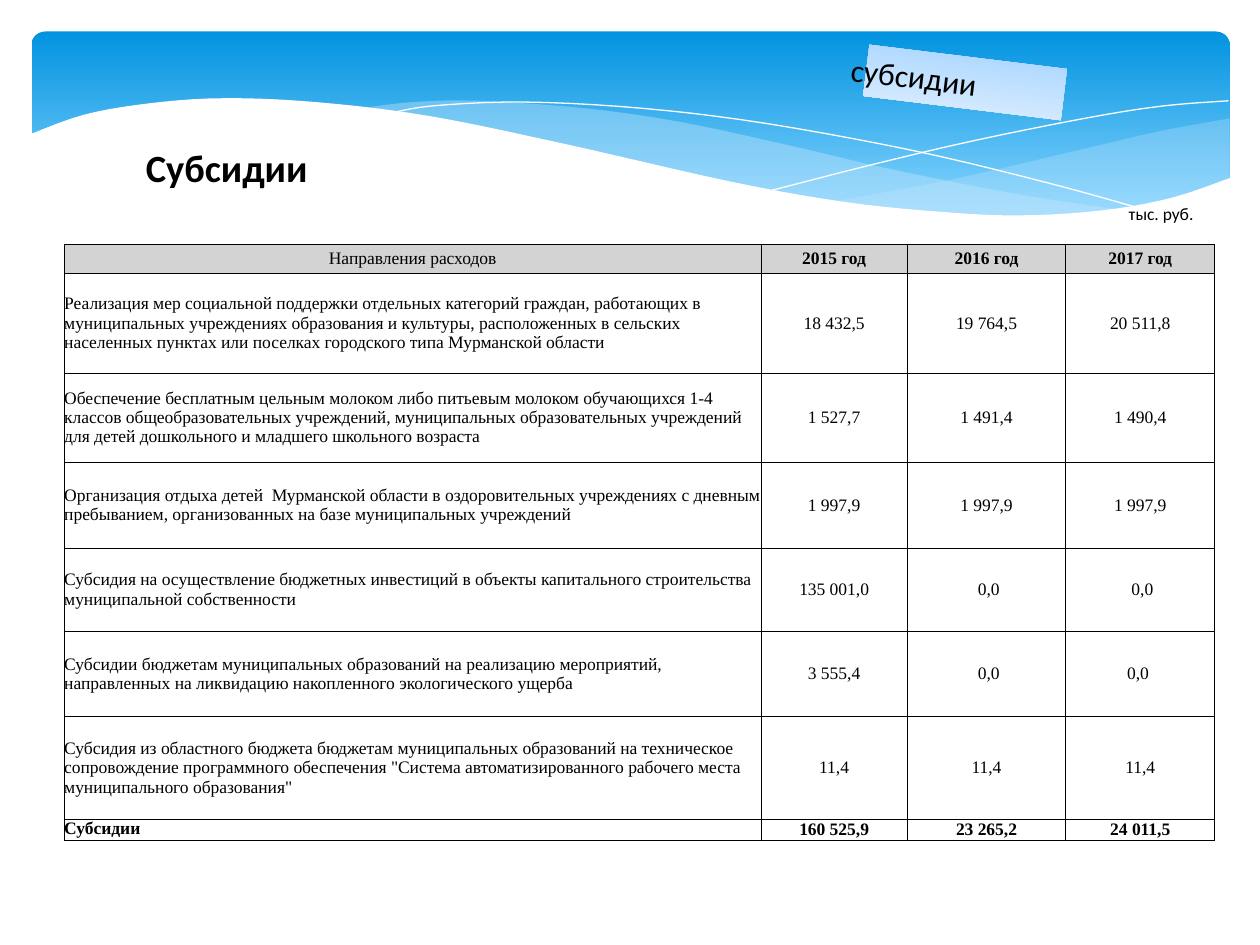
"""Build the slide on municipal subsidies for 2015-2017."""
from dataclasses import dataclass

from lxml import etree
from pptx import Presentation, util as u
from pptx.dml.color import RGBColor
from pptx.enum import shapes, text
from pptx.oxml.ns import qn


@dataclass(frozen=True)
class Theme:
    """Colours, fonts and type sizes of the slide."""
    ink: str = "000000"
    paper: str = "FFFFFF"
    header: str = "D3D3D3"
    wave: str = "C6E7FC"
    sky: tuple = ((0, "0293E0"), (0.9, "83D3FE"))
    ribbon: tuple = ((0, "A1D3FF"), (1, "E3F0FF"))
    heading_font: str = "Calibri"
    table_font: str = "Times New Roman"
    title: int = 22
    label: int = 18
    body: int = 10


THEME = Theme()
WIDTH, HEIGHT = u.Inches(10), u.Inches(7.5)
COLUMN, ROW = WIDTH / 10, HEIGHT / 7.5

BACK_WAVE = [
    [(9.76, 0.94), (9.21, 1.04), (8.61, 1.18), (7.53, 1.43), (6.61, 1.6)],
    [(6.61, 1.6), (7.19, 1.67), (7.81, 1.72), (8.35, 1.72), (8.89, 1.66), (9.35, 1.56), (9.76, 1.41)],
]
MIDDLE_WAVE = [
    [(8.93, 1.67), (8.07, 1.54), (7.06, 1.34), (6.29, 1.16), (5.41, 0.97), (4.65, 0.86),
     (3.8, 0.8), (3.28, 0.81), (2.86, 0.86)],
    [(2.86, 0.86), (3.62, 0.97), (4.49, 1.16), (5.66, 1.43), (6.5, 1.58), (7.22, 1.68),
     (7.85, 1.72), (8.38, 1.72), (8.93, 1.67)],
]
FALLING_LINE = [[(3.09, 0.9), (3.44, 0.84), (4.16, 0.81), (5.1, 0.86), (6.08, 0.98),
                 (7.27, 1.2), (8.31, 1.45), (9.07, 1.66)]]
RISING_LINE = [[(6.13, 1.51), (6.95, 1.3), (7.76, 1.11), (8.66, 0.93), (9.24, 0.84), (9.75, 0.8)]]
FRONT_WAVE = [
    [(9.77, 1.41), (9.3, 1.57), (8.75, 1.67), (8.09, 1.71), (7.44, 1.68), (6.68, 1.6),
     (5.79, 1.44), (4.47, 1.14), (3.4, 0.92), (2.5, 0.81), (1.77, 0.78), (1.19, 0.82),
     (0.67, 0.91), (0.23, 1.07)],
    [(0.23, 2.24), (9.77, 2.24)],
]

COLUMNS = (5.53, 1.16, 1.26, 1.18)
ROWS = (0.23, 0.79, 0.71, 0.68, 0.66, 0.68, 0.81, 0.1)
SUBSIDIES = [
    ("Направления расходов", "2015 год", "2016 год", "2017 год"),
    ("Реализация мер социальной поддержки отдельных категорий граждан, работающих в "
     "муниципальных учреждениях образования и культуры, расположенных в сельских населенных "
     "пунктах или поселках городского типа Мурманской области", "18 432,5", "19 764,5", "20 511,8"),
    ("Обеспечение бесплатным цельным молоком либо питьевым молоком обучающихся 1-4 классов "
     "общеобразовательных учреждений, муниципальных образовательных учреждений для детей "
     "дошкольного и младшего школьного возраста", "1 527,7", "1 491,4", "1 490,4"),
    ("Организация отдыха детей  Мурманской области в оздоровительных учреждениях с дневным "
     "пребыванием, организованных на базе муниципальных учреждений", "1 997,9", "1 997,9", "1 997,9"),
    ("Субсидия на осуществление бюджетных инвестиций в объекты капитального строительства "
     "муниципальной собственности", "135 001,0", " 0,0", " 0,0"),
    ("Субсидии бюджетам муниципальных образований на реализацию мероприятий, направленных на "
     "ликвидацию накопленного экологического ущерба", "3 555,4", " 0,0", "0,0 "),
    ("Субсидия из областного бюджета бюджетам муниципальных образований на техническое "
     "сопровождение программного обеспечения \"Система автоматизированного рабочего места "
     "муниципального образования\"", "11,4", "11,4", "11,4"),
    ("Субсидии", "160 525,9", "23 265,2", "24 011,5"),
]


def place(left, top, width, height):
    """Turn grid columns and rows into slide lengths."""
    return [u.Emu(round(n * unit)) for n, unit in zip((left, top, width, height), (COLUMN, ROW) * 2)]


def smooth(knots, steps=5):
    """Return points of a Catmull-Rom curve through the knots."""
    if len(knots) == 2:
        return knots
    padded = [knots[0], *knots, knots[-1]]
    points = []
    for a, b, c, d in zip(padded, padded[1:], padded[2:], padded[3:]):
        for t in (step / steps for step in range(steps)):
            points.append(tuple(
                q + t / 2 * (r - p + t * (2 * p - 5 * q + 4 * r - s + t * (3 * (q - r) + s - p)))
                for p, q, r, s in zip(a, b, c, d)))
    return points + [knots[-1]]


def add_curve(slide, curves, fill=None, opacity=100):
    """Draw joined curves as a filled wave, or as a white hairline without a fill."""
    points = [(x * COLUMN, y * ROW) for knots in curves for x, y in smooth(knots)]
    builder = slide.shapes.build_freeform(*points[0])
    builder.add_line_segments(points[1:], close=fill is not None)
    curve = builder.convert_to_shape()
    curve.shadow.inherit = False
    if fill is None:
        curve.fill.background()
        curve.line.color.rgb = RGBColor.from_string(THEME.paper)
        curve.line.width = 0
        return
    curve.line.fill.background()
    curve.fill.solid()
    curve.fill.fore_color.rgb = RGBColor.from_string(fill)
    if opacity < 100:
        colour = curve.fill._xPr.find(qn("a:solidFill"))[0]
        etree.SubElement(colour, qn("a:alpha"), val=str(opacity * 1000))


def add_panel(slide, kind, box, stops):
    """Draw a preset shape with a gradient running downwards."""
    panel = slide.shapes.add_shape(kind, *place(*box))
    panel.shadow.inherit = False
    panel.line.fill.background()
    panel.fill.gradient()
    panel.fill.gradient_angle = 270
    for stop, (position, colour) in zip(panel.fill.gradient_stops, stops):
        stop.position = position
        stop.color.rgb = RGBColor.from_string(colour)
    return panel


def write(frame, words, size, font=THEME.heading_font, bold=False, align=text.PP_ALIGN.LEFT):
    """Put one styled paragraph into a text frame."""
    paragraph = frame.paragraphs[0]
    paragraph.text = words
    paragraph.alignment = align
    paragraph.font.name = font
    paragraph.font.size = u.Pt(size)
    paragraph.font.bold = bold
    paragraph.font.color.rgb = RGBColor.from_string(THEME.ink)


def add_caption(slide, box, words, size, bold=False, wrap=True):
    """Add a plain text box."""
    frame = slide.shapes.add_textbox(*place(*box)).text_frame
    frame.word_wrap = wrap
    write(frame, words, size, bold=bold)


def add_borders(cell):
    """Rule all four sides of a cell ahead of its fill."""
    properties = cell._tc.get_or_add_tcPr()
    for index, side in enumerate(("lnL", "lnR", "lnT", "lnB")):
        rule = etree.Element(qn(f"a:{side}"), w=str(u.Pt(0.5)))
        fill = etree.SubElement(rule, qn("a:solidFill"))
        etree.SubElement(fill, qn("a:srgbClr"), val=THEME.ink)
        properties.insert(index, rule)


def add_subsidies(slide, left, top):
    """Add the table of subsidies by purpose and year."""
    box = place(left, top, sum(COLUMNS), sum(ROWS))
    table = slide.shapes.add_table(len(ROWS), len(COLUMNS), *box).table
    table.first_row = table.horz_banding = False
    for column, width in zip(table.columns, COLUMNS):
        column.width = u.Emu(round(width * COLUMN))
    last = len(ROWS) - 1
    for r, (height, entries) in enumerate(zip(ROWS, SUBSIDIES)):
        table.rows[r].height = u.Emu(round(height * ROW))
        for c, entry in enumerate(entries):
            cell = table.cell(r, c)
            cell.margin_left = cell.margin_right = cell.margin_top = cell.margin_bottom = 0
            cell.vertical_anchor = text.MSO_ANCHOR.TOP if (r, c) == (last, 0) else text.MSO_ANCHOR.MIDDLE
            if r == 0:
                cell.fill.solid()
                cell.fill.fore_color.rgb = RGBColor.from_string(THEME.header)
            else:
                cell.fill.background()
            add_borders(cell)
            align = text.PP_ALIGN.CENTER if r == 0 or c > 0 else text.PP_ALIGN.LEFT
            write(cell.text_frame, entry, THEME.body, THEME.table_font, r == last or (r == 0 and c > 0), align)


def add_ribbon(slide):
    """Add the tilted label in the sky."""
    ribbon = add_panel(slide, shapes.MSO_SHAPE.RECTANGLE, (6.87, 0.45, 1.58, 0.41), THEME.ribbon)
    ribbon.rotation = 7
    ribbon.text_frame.word_wrap = True
    ribbon.text_frame.margin_left = u.Inches(-0.12)
    ribbon.text_frame.vertical_anchor = text.MSO_ANCHOR.MIDDLE
    write(ribbon.text_frame, "субсидии", THEME.label)


def main():
    """Build and save the slide."""
    deck = Presentation()
    deck.slide_width, deck.slide_height = WIDTH, HEIGHT
    slide = deck.slides.add_slide(deck.slide_layouts[6])
    sky = add_panel(slide, shapes.MSO_SHAPE.ROUNDED_RECTANGLE, (0.25, 0.25, 9.51, 1.56), THEME.sky)
    sky.adjustments[0] = 0.07
    add_curve(slide, BACK_WAVE, THEME.wave, 29)
    add_curve(slide, MIDDLE_WAVE, THEME.wave, 40)
    add_curve(slide, FALLING_LINE)
    add_curve(slide, RISING_LINE)
    add_curve(slide, FRONT_WAVE, THEME.paper)
    add_caption(slide, (1.06, 1.09, 1.5, 0.47), "Субсидии", THEME.title, bold=True, wrap=False)
    add_subsidies(slide, 0.51, 1.94)
    add_caption(slide, (8.86, 1.56, 1.02, 0.27), "тыс. руб.", THEME.body)
    add_ribbon(slide)
    deck.save("out.pptx")


if __name__ == "__main__":
    main()
